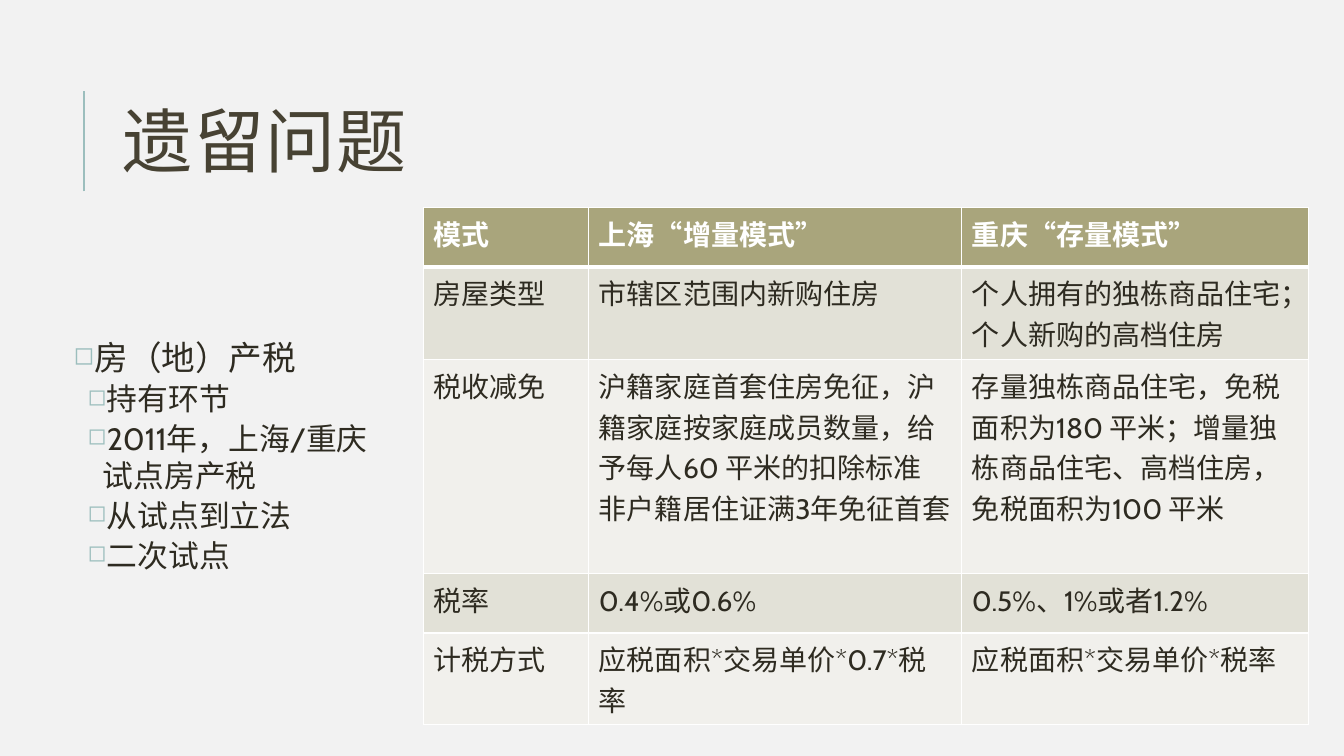
from lxml import etree
from pptx import Presentation
from pptx.dml.color import RGBColor
from pptx.enum import shapes, text
from pptx.oxml import ns
from pptx.util import Emu, Inches, Pt

# Grid: 100 columns by 100 rows over the whole slide
W, H = Inches(13.33), Inches(7.5)
COLORS = {
    "back": "F2F2F2", "rule": "9CBEBD", "title": "474233", "ink": "2E2B21",
    "white": "FFFFFF", "head": "A9A57C", "band": "E2E1D7", "pale": "F1F0EC",
}
BODY_FONT, TITLE_FONT = "Cabin", "Calibri"

OUTLINE = [
    (0, "房（地）产税"),
    (1, "持有环节"),
    (1, "2011年，上海/重庆试点房产税"),
    (1, "从试点到立法"),
    (1, "二次试点"),
]
# Outline level: size, space before, left margin, indent
LEVELS = [(24, 12, 0.1, -0.1), (22, 2, 0.29, -0.15)]

TAX_MODES = [
    ["模式", "上海“增量模式”", "重庆“存量模式”"],
    ["房屋类型", "市辖区范围内新购住房", "个人拥有的独栋商品住宅；个人新购的高档住房"],
    ["税收减免",
     "沪籍家庭首套住房免征，沪籍家庭按家庭成员数量，给予每人60 平米的扣除标准\n非户籍居住证满3年免征首套",
     "存量独栋商品住宅，免税面积为180 平米；增量独栋商品住宅、高档住房，免税面积为100 平米"],
    ["税率", "0.4%或0.6%", "0.5%、1%或者1.2%"],
    ["计税方式", "应税面积*交易单价*0.7*税率", "应税面积*交易单价*税率"],
]
TABLE_COLS = [12.3, 27.76, 25.81]
TABLE_ROWS = [7.87, 12.27, 28.25, 7.87, 12.15]


def col(n):
    return Emu(round(W * n / 100))


def row(n):
    return Emu(round(H * n / 100))


def rgb(name):
    return RGBColor.from_string(COLORS[name])


def add_run(p, words, size, font, color, bold=False):
    r = p.add_run()
    r.text = words
    r.font.size, r.font.name, r.font.bold = Pt(size), font, bold
    r.font.color.rgb = rgb(color)
    return r


def add_box(slide, x, y, w, h):
    tf = slide.shapes.add_textbox(col(x), row(y), col(w), row(h)).text_frame
    tf.word_wrap = True
    tf.vertical_anchor = text.MSO_ANCHOR.MIDDLE
    return tf


def add_rule(slide, x, top, bottom):
    line = slide.shapes.add_connector(
        shapes.MSO_CONNECTOR.STRAIGHT, col(x), row(bottom), col(x), row(top))
    line.line.color.rgb = rgb("rule")
    line.line.width = Pt(1.5)
    etree.SubElement(line._element.spPr, ns.qn("a:effectLst"))


def add_title(slide, words):
    p = add_box(slide, 8.4, 8.53, 79.74, 21.87).paragraphs[0]
    p.line_spacing = 0.8
    r = add_run(p, words, 50, TITLE_FONT, "title")
    r.font._element.set("spc", "100")


def set_bullet(p, margin, indent):
    pPr = p._p.get_or_add_pPr()
    pPr.set("marL", str(Inches(margin)))
    pPr.set("indent", str(Inches(indent)))
    color = etree.SubElement(pPr, ns.qn("a:buClr"))
    etree.SubElement(color, ns.qn("a:srgbClr"), val=COLORS["rule"])
    etree.SubElement(pPr, ns.qn("a:buSzPct"), val="75000")
    etree.SubElement(pPr, ns.qn("a:buChar"), char="◻")


def add_outline(slide, items):
    tf = add_box(slide, 5.1, 27.47, 24.38, 65.47)
    tf.margin_left = tf.margin_right = Inches(0.05)
    for i, (level, words) in enumerate(items):
        size, before, margin, indent = LEVELS[level]
        p = tf.add_paragraph() if i else tf.paragraphs[0]
        p.level = level
        p.line_spacing = 1.0
        p.space_before = Pt(before)
        set_bullet(p, margin, indent)
        add_run(p, words, size, BODY_FONT, "ink")


def set_borders(cell, top, bottom):
    tcPr = cell._tc.get_or_add_tcPr()
    # Border lines stand before the fill
    for i, (side, width) in enumerate(zip("LRTB", (1, 1, top, bottom))):
        ln = etree.Element(ns.qn("a:ln" + side), w=str(Pt(width)))
        fill = etree.SubElement(ln, ns.qn("a:solidFill"))
        etree.SubElement(fill, ns.qn("a:srgbClr"), val=COLORS["white"])
        tcPr.insert(i, ln)


def fill_cell(cell, words, fill, ink, bold):
    cell.fill.solid()
    cell.fill.fore_color.rgb = rgb(fill)
    tf = cell.text_frame
    for i, part in enumerate(words.split("\n")):
        p = tf.add_paragraph() if i else tf.paragraphs[0]
        add_run(p, part, 20, BODY_FONT, ink, bold)


def add_mode_table(slide, data):
    table = slide.shapes.add_table(
        len(data), len(data[0]), col(31.51), row(27.47),
        col(sum(TABLE_COLS)), row(sum(TABLE_ROWS))).table
    table.horz_banding = False
    for column, width in zip(table.columns, TABLE_COLS):
        column.width = col(width)
    for i, (line, height) in enumerate(zip(data, TABLE_ROWS)):
        table.rows[i].height = row(height)
        if i == 0:
            look = ("head", "white", True)
        else:
            look = ("band" if i % 2 else "pale", "ink", False)
        for j, words in enumerate(line):
            cell = table.cell(i, j)
            fill_cell(cell, words, *look)
            # A heavy line parts the header from the body
            set_borders(cell, top=3 if i == 1 else 1, bottom=3 if i == 0 else 1)


def main():
    prs = Presentation()
    prs.slide_width, prs.slide_height = W, H
    slide = prs.slides.add_slide(prs.slide_layouts[6])
    slide.background.fill.solid()
    slide.background.fill.fore_color.rgb = rgb("back")

    # Heading
    add_rule(slide, 6.23, 12, 25.33)
    add_title(slide, "遗留问题")

    # Outline on the left, comparison on the right
    add_outline(slide, OUTLINE)
    add_mode_table(slide, TAX_MODES)
    prs.save("out.pptx")


if __name__ == "__main__":
    main()
